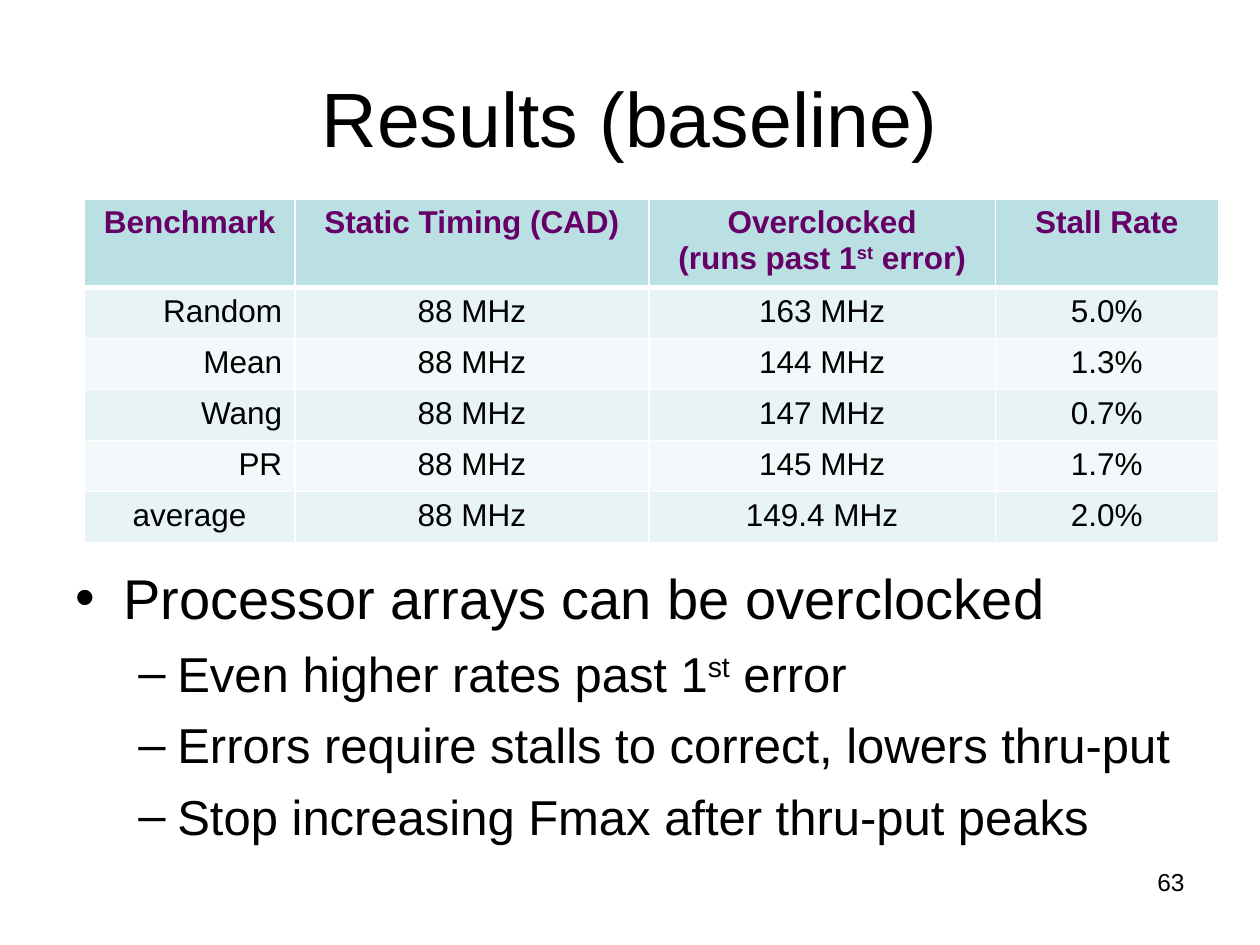
from lxml.etree import SubElement
from pptx import Presentation
from pptx.dml.color import RGBColor
from pptx.enum.text import MSO_ANCHOR as ANCHOR, PP_ALIGN as ALIGN
from pptx.oxml.ns import qn
from pptx.util import Inches, Pt

# Content: "^" surrounds superscript text, a newline is a line break
TITLE = "Results (baseline)"
HEADERS = ["Benchmark", "Static Timing (CAD)",
           "Overclocked\n(runs past 1^st^ error)", "Stall Rate"]
RESULTS = [
    ("Random", "88 MHz", "163 MHz", "5.0%"),
    ("Mean", "88 MHz", "144 MHz", "1.3%"),
    ("Wang", "88 MHz", "147 MHz", "0.7%"),
    ("PR", "88 MHz", "145 MHz", "1.7%"),
    ("average", "88 MHz", "149.4 MHz", "2.0%"),
]
BULLETS = [
    (0, "Processor arrays can be overclocked"),
    (1, "Even higher rates past 1^st^ error"),
    (1, "Errors require stalls to correct, lowers thru-put"),
    (1, "Stop increasing Fmax after thru-put peaks"),
]
PAGE_NUMBER = "63"

# Layout and formats
COLUMN_WIDTHS = [1.67, 2.81, 2.75, 1.77]
HEADER_HEIGHT, ROW_HEIGHT = 0.66, 0.405
HEADER_FILL, BAND_FILLS = "BBE0E3", ["E7F3F4", "F3F9FA"]
HEADER_FONT = {"size": Pt(18), "bold": True}
BODY_FONT = {"size": Pt(18), "bold": False}
LEVELS = [  # bullet, size, left margin, hanging indent, space before
    ("•", 32, 0.38, 0.38, 3),
    ("–", 28, 0.81, 0.31, 7.3),
]


def rgb(value):
    return RGBColor.from_string(value)


def write(para, text, font, color="000000", align=ALIGN.LEFT):
    para.alignment = align
    for index, part in enumerate(text.split("^")):
        for number, line in enumerate(part.split("\n")):
            if number:
                para.add_line_break()
            span = para.add_run()
            span.text = line
            for name, value in {"name": "Arial", **font}.items():
                setattr(span.font, name, value)
            span.font.color.rgb = rgb(color)
            if index % 2:
                span.font._element.set("baseline", "30000")


def add_frame(page, left, top, width, height, anchor=ANCHOR.TOP):
    box = page.shapes.add_textbox(*map(Inches, (left, top, width, height)))
    box.text_frame.word_wrap = True
    box.text_frame.vertical_anchor = anchor
    return box.text_frame


def set_borders(cell, bottom):
    properties = cell._tc.get_or_add_tcPr()
    sides = {"lnL": 1, "lnR": 1, "lnT": 1, "lnB": bottom}
    for position, (side, width) in enumerate(sides.items()):
        line = SubElement(properties, qn(f"a:{side}"), w=str(Pt(width)))
        fill = SubElement(line, qn("a:solidFill"))
        SubElement(fill, qn("a:srgbClr"), val="FFFFFF")
        properties.insert(position, line)


def add_results(page):
    rows = [HEADERS, *RESULTS]
    heights = [HEADER_HEIGHT] + [ROW_HEIGHT] * len(RESULTS)
    table = page.shapes.add_table(
        len(rows), len(HEADERS), Inches(0.67), Inches(1.58),
        Inches(sum(COLUMN_WIDTHS)), Inches(sum(heights))).table
    for column, width in zip(table.columns, COLUMN_WIDTHS):
        column.width = Inches(width)
    for r, (texts, height) in enumerate(zip(rows, heights)):
        table.rows[r].height = Inches(height)
        header = r == 0
        for c, text in enumerate(texts):
            cell = table.cell(r, c)
            cell.fill.solid()
            cell.fill.fore_color.rgb = rgb(HEADER_FILL if header else BAND_FILLS[(r - 1) % 2])
            set_borders(cell, bottom=3 if header else 1)
            named = c == 0 and not header and text != "average"
            write(cell.text_frame.paragraphs[0], text,
                  HEADER_FONT if header else BODY_FONT,
                  "660066" if header else "000000",
                  ALIGN.RIGHT if named else ALIGN.CENTER)


def add_bullets(frame):
    for index, (level, text) in enumerate(BULLETS):
        para = frame.add_paragraph() if index else frame.paragraphs[0]
        mark, size, margin, hang, space = LEVELS[level]
        para.level = level
        para.space_before = Pt(space)
        properties = para._p.get_or_add_pPr()
        properties.set("marL", str(Inches(margin)))
        properties.set("indent", str(-Inches(hang)))
        SubElement(properties, qn("a:buFont"), typeface="Arial")
        SubElement(properties, qn("a:buChar"), char=mark)
        write(para, text, {"size": Pt(size)})


def main():
    deck = Presentation()
    deck.slide_width, deck.slide_height = Inches(10), Inches(7.5)
    page = deck.slides.add_slide(deck.slide_layouts[6])

    # Title
    title = add_frame(page, 0.5, 0.3, 9, 1.25, ANCHOR.MIDDLE)
    write(title.paragraphs[0], TITLE, {"size": Pt(44)}, align=ALIGN.CENTER)

    # Results table, page number and conclusions
    add_results(page)
    number = add_frame(page, 7.17, 6.83, 2.33, 0.52)
    write(number.paragraphs[0], PAGE_NUMBER, {"size": Pt(14)}, align=ALIGN.RIGHT)
    add_bullets(add_frame(page, 0.5, 4.42, 9, 2.28))

    deck.save("out.pptx")


if __name__ == "__main__":
    main()
